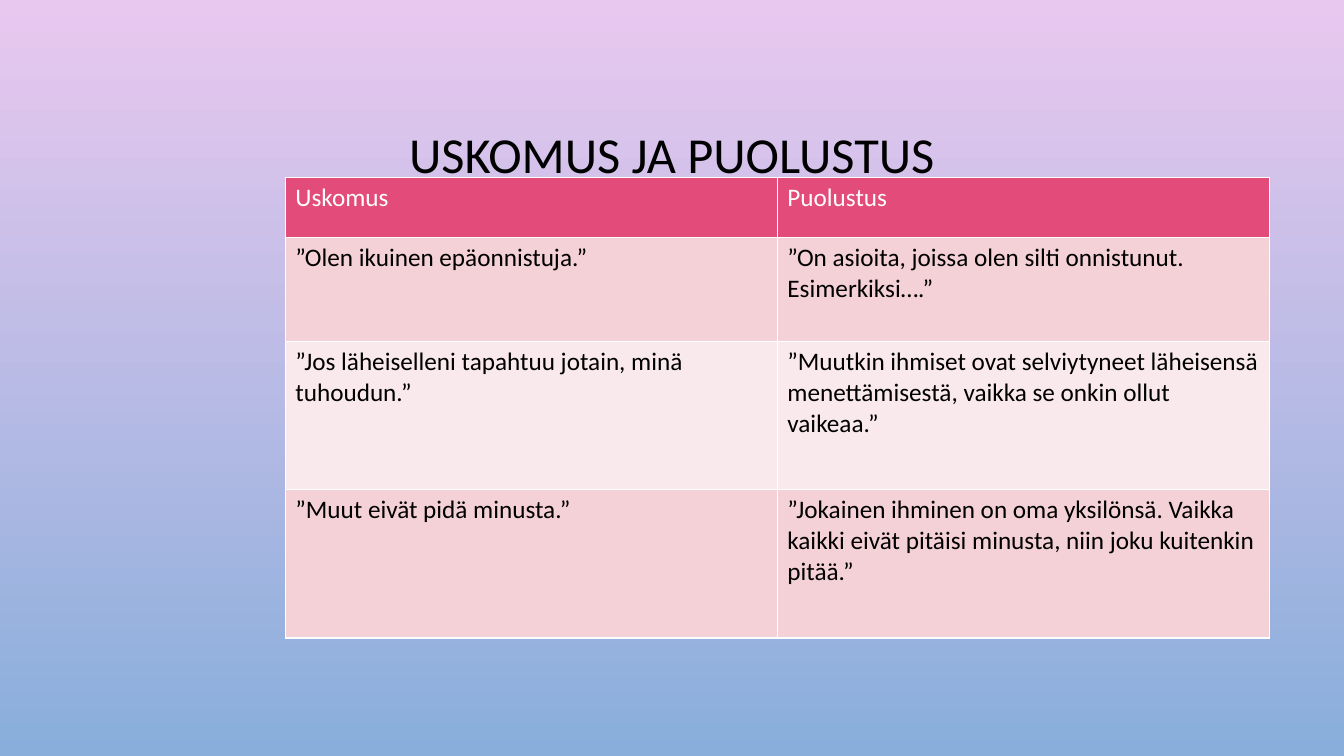
import dataclasses

import lxml.etree
import pptx
import pptx.dml.color
import pptx.enum.text
import pptx.oxml.ns
import pptx.slide
import pptx.table
import pptx.text.text
import pptx.util

EMU_PER_PX = 9144
FONT = "Calibri"
BLACK = "000000"
WHITE = "FFFFFF"
ROSE = "F4D0D7"
PALE_ROSE = "FAE9EC"


@dataclasses.dataclass(frozen=True)
class BeliefRow:
    belief: str
    defence: str
    height: int
    fill: str
    text_color: str = BLACK


ROWS = [
    BeliefRow("Uskomus", "Puolustus", 60, "E34B7A", WHITE),
    BeliefRow("”Olen ikuinen epäonnistuja.”",
              "”On asioita, joissa olen silti onnistunut. Esimerkiksi….”",
              103, ROSE),
    BeliefRow("”Jos läheiselleni tapahtuu jotain, minä tuhoudun.”",
              "”Muutkin ihmiset ovat selviytyneet läheisensä menettämisestä, "
              "vaikka se onkin ollut vaikeaa.”",
              147, PALE_ROSE),
    BeliefRow("”Muut eivät pidä minusta.”",
              "”Jokainen ihminen on oma yksilönsä. Vaikka kaikki eivät pitäisi "
              "minusta, niin joku kuitenkin pitää.”",
              147, ROSE),
]


def px(length: int) -> pptx.util.Emu:
    return pptx.util.Emu(length * EMU_PER_PX)


def rgb(color: str) -> pptx.dml.color.RGBColor:
    return pptx.dml.color.RGBColor.from_string(color)


def add_text(paragraph: pptx.text.text._Paragraph, text: str, size: int, color: str) -> None:
    run = paragraph.add_run()
    run.text = text
    run.font.name = FONT
    run.font.size = pptx.util.Pt(size)
    run.font.bold = False
    run.font.color.rgb = rgb(color)


def add_borders(cell: pptx.table._Cell, color: str, width: int) -> None:
    """Line all four sides; call before filling, as the schema puts lines first."""
    qn = pptx.oxml.ns.qn
    properties = cell._tc.get_or_add_tcPr()
    for side in ("a:lnL", "a:lnR", "a:lnT", "a:lnB"):
        line = lxml.etree.SubElement(properties, qn(side), w=str(pptx.util.Pt(width)))
        solid = lxml.etree.SubElement(line, qn("a:solidFill"))
        lxml.etree.SubElement(solid, qn("a:srgbClr"), val=color)


def paint_background(slide: pptx.slide.Slide, top: str, bottom: str) -> None:
    fill = slide.background.fill
    fill.gradient()
    fill.gradient_angle = 270
    for stop, color in zip(fill.gradient_stops, (top, bottom)):
        stop.color.rgb = rgb(color)


def add_title(slide: pptx.slide.Slide, text: str) -> None:
    frame = slide.shapes.add_textbox(px(100), px(68), px(1133), px(175)).text_frame
    frame.word_wrap = True
    frame.vertical_anchor = pptx.enum.text.MSO_ANCHOR.MIDDLE
    paragraph = frame.paragraphs[0]
    paragraph.alignment = pptx.enum.text.PP_ALIGN.CENTER
    paragraph.line_spacing = 0.9
    add_text(paragraph, text, 36, BLACK)


def add_belief_table(slide: pptx.slide.Slide, rows: list[BeliefRow]) -> None:
    height = sum(row.height for row in rows)
    table = slide.shapes.add_table(
        len(rows), 2, px(283), px(176), px(976), px(height)).table
    for row_index, row in enumerate(rows):
        table.rows[row_index].height = px(row.height)
        for column_index, text in enumerate((row.belief, row.defence)):
            cell = table.cell(row_index, column_index)
            add_borders(cell, WHITE, 1)
            cell.fill.solid()
            cell.fill.fore_color.rgb = rgb(row.fill)
            add_text(cell.text_frame.paragraphs[0], text, 18, row.text_color)


def main() -> None:
    presentation = pptx.Presentation()
    presentation.slide_width = px(1333)
    presentation.slide_height = px(750)
    slide = presentation.slides.add_slide(presentation.slide_layouts[6])
    paint_background(slide, "E9C8EF", "89AEDB")
    add_title(slide, "USKOMUS JA PUOLUSTUS")
    add_belief_table(slide, ROWS)
    presentation.save("out.pptx")


if __name__ == "__main__":
    main()
